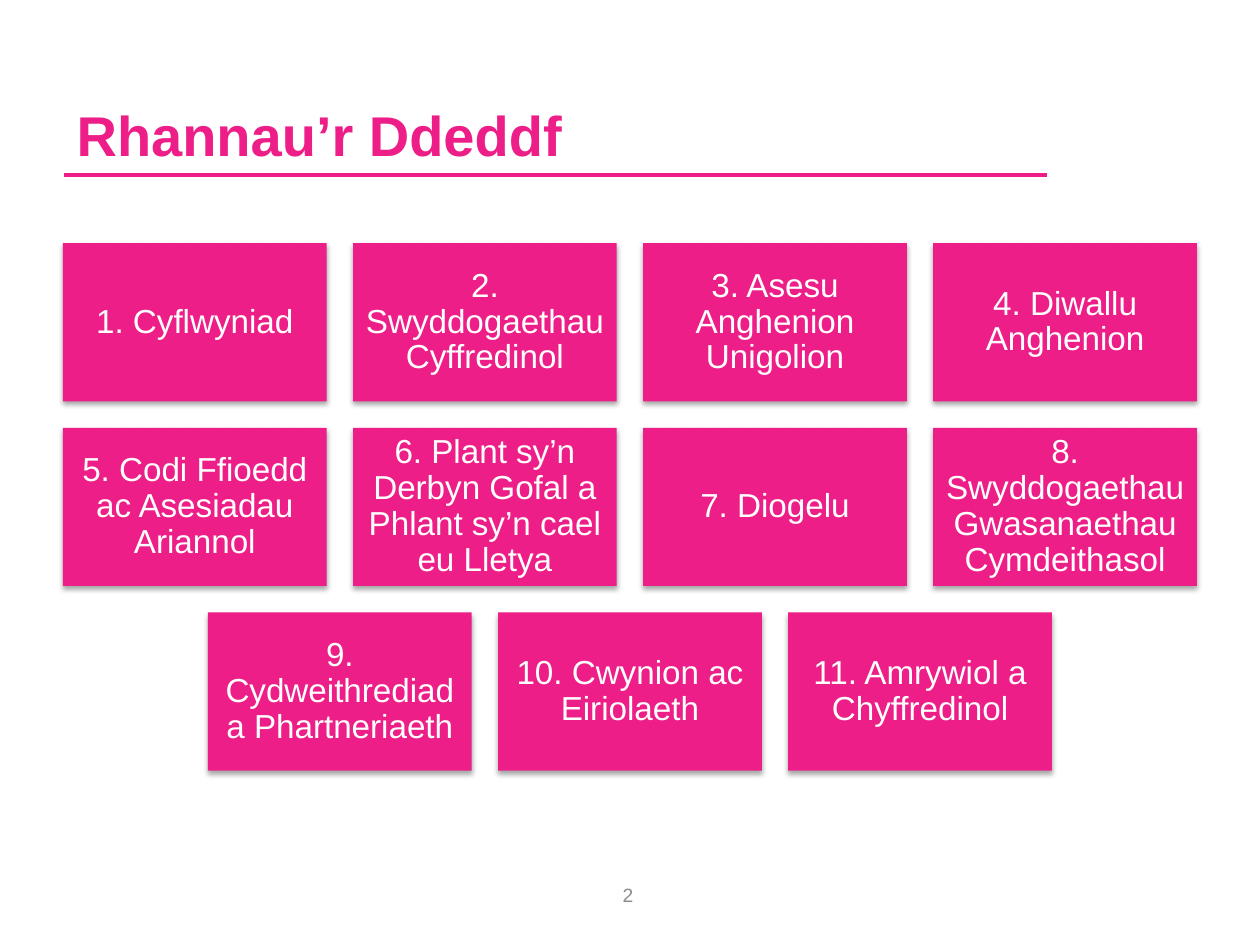
import pptx
import pptx.util
import pptx.oxml
import pptx.oxml.ns
import pptx.dml.color
import pptx.enum.shapes
import pptx.enum.text

Inches = pptx.util.Inches
Pt = pptx.util.Pt
Align = pptx.enum.text.PP_ALIGN
Anchor = pptx.enum.text.MSO_ANCHOR

PINK, WHITE, GREY = "ED1E87", "FFFFFF", "8C8C8C"
PAGE = 10
WIDTH = 9 / 4.3  # four tiles and three gaps of a tenth span nine inches
HEIGHT = 0.6 * WIDTH
GAP = 0.1 * WIDTH
TOP = 1.93

ROWS = [
    ["1. Cyflwyniad", "2. Swyddogaethau Cyffredinol",
     "3. Asesu Anghenion Unigolion", "4. Diwallu Anghenion"],
    ["5. Codi Ffioedd ac Asesiadau Ariannol",
     "6. Plant sy’n Derbyn Gofal a Phlant sy’n cael eu Lletya",
     "7. Diogelu", "8. Swyddogaethau Gwasanaethau Cymdeithasol"],
    ["9. Cydweithrediad a Phartneriaeth", "10. Cwynion ac Eiriolaeth",
     "11. Amrywiol a Chyffredinol"],
]


def color(code):
    return pptx.dml.color.RGBColor.from_string(code)


def effects(shape, inner=""):
    """Give the shape its own effect list, empty unless inner is set."""
    xml = f'<a:effectLst {pptx.oxml.ns.nsdecls("a")}>{inner}</a:effectLst>'
    shape._element.spPr.append(pptx.oxml.parse_xml(xml))


def write(shape, text, size, ink, anchor, align, bold=False, inset=None):
    frame = shape.text_frame
    form = {"word_wrap": True, "vertical_anchor": anchor}
    if inset is not None:
        for side in ("left", "top", "right", "bottom"):
            form[f"margin_{side}"] = Inches(inset)
    for name, value in form.items():
        setattr(frame, name, value)
    para = frame.paragraphs[0]
    para.text = text
    para.alignment = align
    font = para.runs[0].font
    for name, value in {"name": "Arial", "size": Pt(size), "bold": bold}.items():
        setattr(font, name, value)
    font.color.rgb = color(ink)
    return para


def label(slide, box, *args, **form):
    shape = slide.shapes.add_textbox(*map(Inches, box))
    write(shape, *args, **form)


def rule(slide, left, right, top):
    line = slide.shapes.add_connector(
        pptx.enum.shapes.MSO_CONNECTOR.STRAIGHT,
        Inches(left), Inches(top), Inches(right), Inches(top))
    line.line.color.rgb = color(PINK)
    line.line.width = Pt(2)
    effects(line)


def tile(slide, left, top, text):
    shape = slide.shapes.add_shape(
        pptx.enum.shapes.MSO_SHAPE.RECTANGLE,
        *map(Inches, (left, top, WIDTH, HEIGHT)))
    shape.fill.solid()
    shape.fill.fore_color.rgb = color(PINK)
    shape.line.fill.background()
    effects(shape, f'<a:outerShdw blurRad="{Pt(3.1)}" dist="{Pt(1.8)}" '
                   'dir="5400000" rotWithShape="0"><a:srgbClr val="000000">'
                   '<a:alpha val="35000"/></a:srgbClr></a:outerShdw>')
    para = write(shape, text, 19, WHITE, Anchor.MIDDLE, Align.CENTER, inset=0.08)
    para.line_spacing = 0.9


def grid(slide):
    """Place each row of tiles centred on the page."""
    for row, texts in enumerate(ROWS):
        span = len(texts) * (WIDTH + GAP) - GAP
        for col, text in enumerate(texts):
            left = (PAGE - span) / 2 + col * (WIDTH + GAP)
            tile(slide, left, TOP + row * (HEIGHT + GAP), text)


def main():
    deck = pptx.Presentation()
    deck.slide_width, deck.slide_height = Inches(PAGE), Inches(7.5)
    slide = deck.slides.add_slide(deck.slide_layouts[6])
    rule(slide, 0.51, 8.31, 1.39)
    grid(slide)
    label(slide, (3.82, 6.9, 2.33, 0.4), "2", 11, GREY,
          Anchor.MIDDLE, Align.CENTER)
    label(slide, (0.51, 0.29, 7.8, 1.09), "Rhannau’r Ddeddf", 32, PINK,
          Anchor.BOTTOM, Align.LEFT, bold=True)
    deck.save("out.pptx")


if __name__ == "__main__":
    main()
